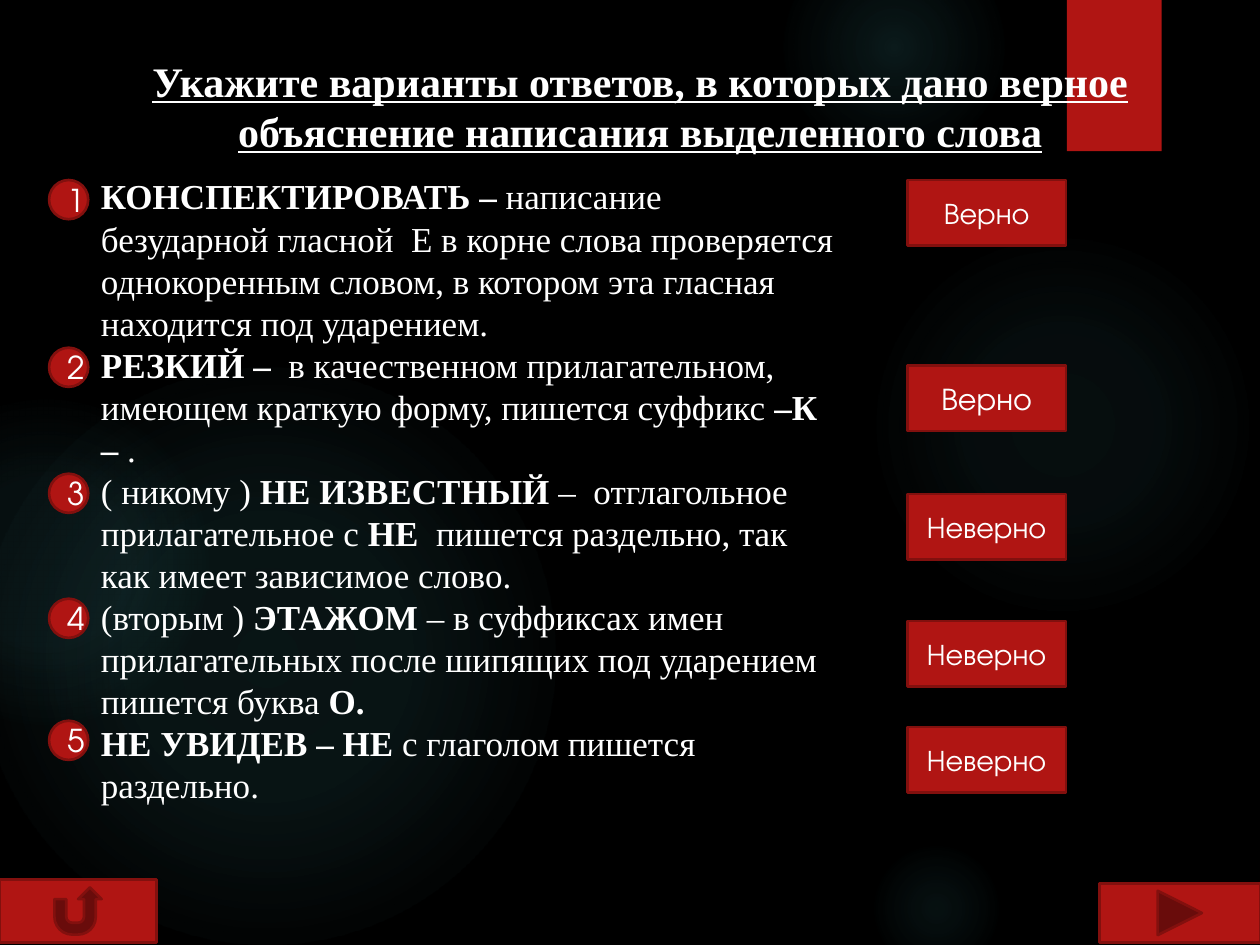
from lxml import etree
from pptx import Presentation
from pptx import util as u
from pptx.dml.color import RGBColor
from pptx.enum import shapes, text
from pptx.oxml.ns import qn

BLACK = RGBColor(0x00, 0x00, 0x00)
WHITE = RGBColor(0xFF, 0xFF, 0xFF)
RED = RGBColor(0xB0, 0x15, 0x13)
DARK = RGBColor(0x82, 0x10, 0x0E)
TEAL = RGBColor(0x50, 0xB9, 0xC1)
SERIF = "Times New Roman"
SANS = "TeX Gyre Adventor"
KIND = shapes.MSO_SHAPE

# left, top, diameter, (stop, opacity) pairs in percent
GLOWS = [
    (17.5, 4.65, 7.82, ((0, 7), (36, 6), (69, 0))),
    (15.8, -1.27, 4.45, ((0, 14), (36, 7), (73, 0))),
    (17.5, 16.94, 2.74, ((0, 9), (36, 5), (66, 0))),
    (-0.43, 7.42, 11.63, ((0, 11), (36, 10), (75, 0))),
    (-2.34, 8.05, 6.55, ((0, 8), (36, 8), (72, 0))),
]
TITLE = "Укажите варианты ответов, в которых дано верное объяснение написания выделенного слова"

# Bold passages stand between asterisks
ITEMS = [
    "*КОНСПЕКТИРОВАТЬ – *написание безударной гласной  Е в корне слова "
    "проверяется однокоренным словом, в котором эта гласная находится под ударением.",
    "*РЕЗКИЙ –  *в качественном прилагательном, имеющем краткую форму, "
    "пишется суффикс *–К – *.",
    "( никому ) *НЕ ИЗВЕСТНЫЙ *–  отглагольное прилагательное с *НЕ*  пишется "
    "раздельно, так как имеет зависимое слово.",
    "(вторым ) *ЭТАЖОМ *– в суффиксах имен прилагательных после шипящих под "
    "ударением пишется буква *О.*",
    "*НЕ УВИДЕВ – НЕ *с глаголом пишется раздельно.",
]
# badge top, button top, verdict, verdict size
ROWS = [
    (3.63, 3.63, "Верно", 17),
    (7.01, 7.37, "Верно", 18),
    (9.55, 9.96, "Неверно", 17),
    (12.07, 12.52, "Неверно", 17),
    (14.53, 14.66, "Неверно", 17),
]


class Deck:
    """Holds the presentation, its current slide and the shared style."""

    def __init__(self):
        self.prs = Presentation()
        self.prs.slide_width, self.prs.slide_height = u.Cm(25.4), u.Cm(19.05)
        self.slide = self.prs.slides.add_slide(self.prs.slide_layouts[1])
        back = self.slide.background.fill
        back.solid()
        back.fore_color.rgb = BLACK

    def shape(self, kind, box, line=DARK):
        form = self.slide.shapes.add_shape(kind, *map(u.Cm, box))
        form.shadow.inherit = False
        form.fill.solid()
        form.fill.fore_color.rgb = RED
        if line is None:
            form.line.fill.background()
        else:
            form.line.color.rgb = line
            form.line.width = u.Pt(1.5)
        return form

    def glow(self, left, top, size, stops):
        """Draw a circle that fades out from its centre."""
        form = self.shape(KIND.OVAL, (left, top, size, size), None)
        props = form._element.spPr
        grad = etree.Element(qn("a:gradFill"), rotWithShape="1")
        marks = etree.SubElement(grad, qn("a:gsLst"))
        for pos, alpha in stops:
            mark = etree.SubElement(marks, qn("a:gs"), pos=str(pos * 1000))
            tint = etree.SubElement(mark, qn("a:srgbClr"), val=str(TEAL))
            etree.SubElement(tint, qn("a:alpha"), val=str(alpha * 1000))
        course = etree.SubElement(grad, qn("a:path"), path="circle")
        sides = dict.fromkeys("ltrb", "50000")
        etree.SubElement(course, qn("a:fillToRect"), **sides)
        props.replace(props.find(qn("a:solidFill")), grad)

    def label(self, kind, box, words, size):
        para = self.shape(kind, box).text_frame.paragraphs[0]
        para.text = words
        para.alignment = text.PP_ALIGN.CENTER
        self.style(para.runs[0], SANS, size)

    def style(self, run, name, size, bold=False):
        font = run.font
        font.name, font.size, font.bold = name, u.Pt(size), bold
        font.color.rgb = WHITE

    def place(self, holder, box):
        """Move a placeholder to its box, in front of what is drawn so far."""
        holder.left, holder.top, holder.width, holder.height = map(u.Cm, box)
        self.slide.shapes._spTree.append(holder._element)
        frame = holder.text_frame
        frame.word_wrap = True
        frame.vertical_anchor = text.MSO_ANCHOR.TOP
        frame.auto_size = text.MSO_AUTO_SIZE.SHAPE_TO_FIT_TEXT
        return frame

    def title(self, words, box):
        frame = self.place(self.slide.shapes.title, box)
        frame.text = words
        para = frame.paragraphs[0]
        para.alignment = text.PP_ALIGN.CENTER
        para.line_spacing = u.Pt(28.6)
        self.style(para.runs[0], SERIF, 24, True)
        para.runs[0].font.underline = True

    def body(self, items, box):
        frame = self.place(self.slide.placeholders[1], box)
        frame.text = "\n".join(items)
        for para, item in zip(frame.paragraphs, items):
            para.text = ""
            para.line_spacing = u.Pt(24)
            para.space_before = u.Pt(0)
            props = para._p.get_or_add_pPr()
            props.set("marL", "0")
            props.set("indent", "0")
            etree.SubElement(props, qn("a:buNone"))
            for i, part in enumerate(item.split("*")):
                if part:
                    run = para.add_run()
                    run.text = part
                    self.style(run, SERIF, 20, i % 2 == 1)


def main():
    deck = Deck()
    for glow in GLOWS:
        deck.glow(*glow)
    deck.shape(KIND.RECTANGLE, (21.51, 0, 1.91, 3.05), None)
    deck.title(TITLE, (1.4, 0.99, 23.01, 2.31))
    deck.body(ITEMS, (1.78, 3.4, 15.32, 13.08))
    for num, (badge, button, verdict, size) in enumerate(ROWS, 1):
        deck.label(KIND.OVAL, (0.99, badge, 0.79, 0.79), str(num), 18)
        deck.label(KIND.RECTANGLE, (18.29, button, 3.2, 1.32), verdict, size)
    deck.shape(KIND.ACTION_BUTTON_FORWARD_OR_NEXT, (22.17, 17.81, 3.23, 1.19))
    deck.shape(KIND.ACTION_BUTTON_RETURN, (0, 17.73, 3.15, 1.27))
    deck.prs.save("out.pptx")


if __name__ == "__main__":
    main()
